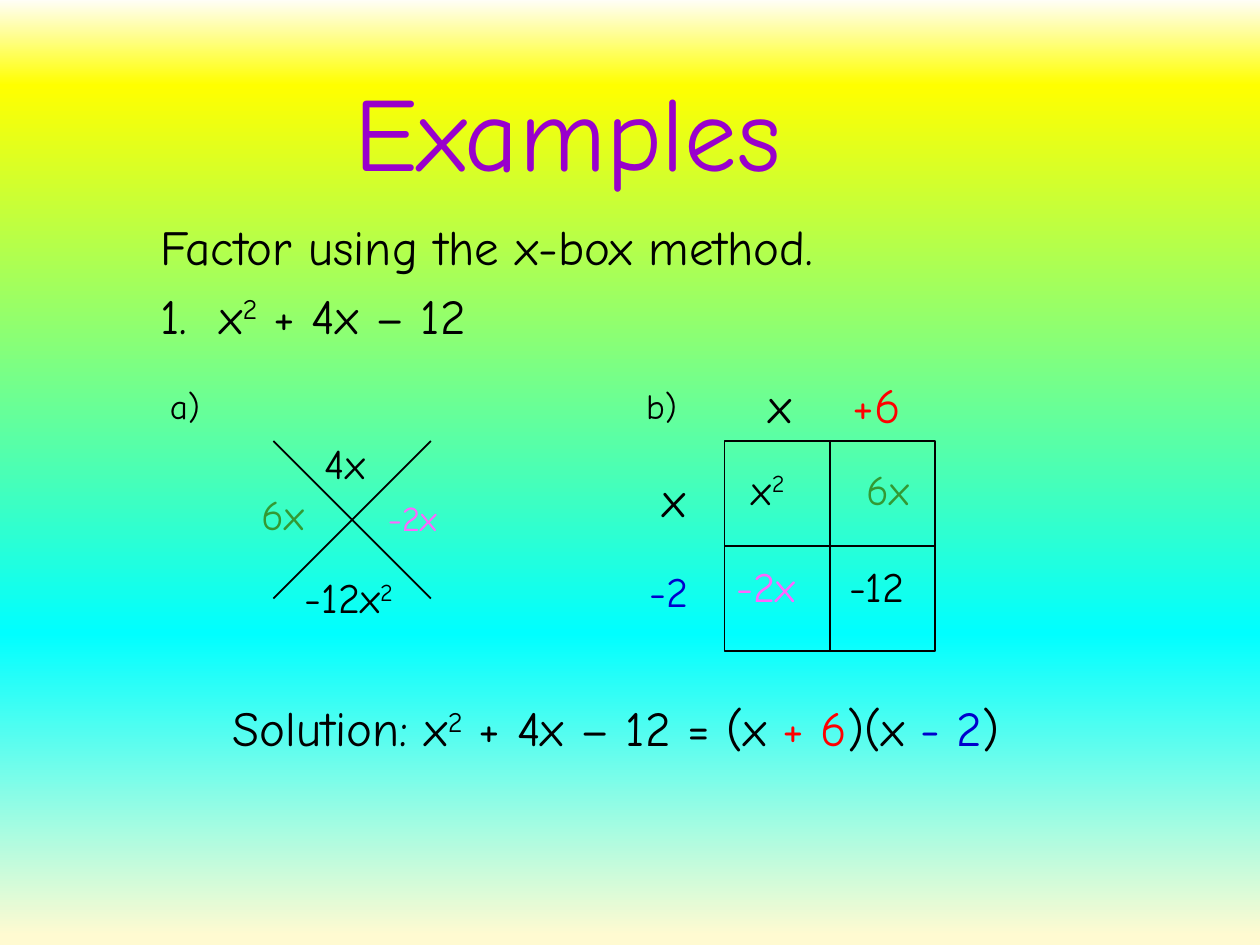
from dataclasses import dataclass

from lxml import etree
from pptx import Presentation
from pptx.dml.color import RGBColor
from pptx.enum.shapes import MSO_CONNECTOR, MSO_SHAPE
from pptx.enum.text import MSO_ANCHOR, MSO_AUTO_SIZE, PP_ALIGN
from pptx.oxml.ns import qn
from pptx.util import Inches, Pt

STRAIGHT = MSO_CONNECTOR.STRAIGHT
RECTANGLE = MSO_SHAPE.RECTANGLE
BOTTOM, TOP = MSO_ANCHOR.BOTTOM, MSO_ANCHOR.TOP
CENTER, LEFT = PP_ALIGN.CENTER, PP_ALIGN.LEFT
NO_AUTOFIT = MSO_AUTO_SIZE.NONE

FONT = "Comic Neue"
COLORS = {
    "black": "000000", "purple": "9900CC", "green": "339933",
    "pink": "FF66FF", "red": "FF0000", "blue": "0000CC",
}
BACKGROUND_STOPS = [(0, "FFFEF7"), (9, "FFFF00"), (67, "00FFFF"), (99, "FFFAD1")]


@dataclass
class Span:
    text: str
    color: str = "black"
    raised: bool = False


@dataclass
class Label:
    left: float
    top: float
    spans: list[Span]
    size: int = 24
    width: float = 1.1
    height: float = 0.5


SQUARED = Span("2", raised=True)
BODY_LINES = [
    [Span("Factor using the x-box method.")],
    [Span("1.  x"), SQUARED, Span(" + 4x – 12")],
]
PART_LABELS = [
    Label(1.25, 3.0, [Span("a)")], 20),
    Label(5.03, 3.0, [Span("b)")], 20),
]
CROSS_LABELS = [
    Label(2.48, 3.42, [Span("4x")]),
    Label(2.32, 4.49, [Span("-12x"), SQUARED]),
    Label(1.98, 3.83, [Span("6x", "green")]),
    Label(2.98, 3.89, [Span("-2x", "pink")], 20),
]
BOX_LABELS = [
    Label(6.0, 2.92, [Span("x")], 28),
    Label(6.67, 2.92, [Span("+6", "red")], 28),
    Label(5.16, 3.67, [Span("x")], 28),
    Label(5.06, 4.44, [Span("-2", "blue")]),
    Label(5.87, 3.63, [Span("x"), SQUARED]),
    Label(6.78, 3.63, [Span("6x", "green")]),
    Label(5.75, 4.4, [Span("-2x", "pink")]),
    Label(6.64, 4.4, [Span("-12")]),
]
SOLUTION = Label(1.75, 5.58, [
    Span("Solution: x"), SQUARED, Span(" + 4x – 12 = (x "), Span("+ 6", "red"),
    Span(")(x "), Span("- 2", "blue"), Span(")"),
], 28, 6.76, 0.87)


def color_of(name: str) -> RGBColor:
    return RGBColor.from_string(COLORS[name])


def set_format(target, **values) -> None:
    for name, value in values.items():
        setattr(target, name, value)


def place(shape, left: float, top: float, width: float, height: float) -> None:
    set_format(shape, left=Inches(left), top=Inches(top),
               width=Inches(width), height=Inches(height))


def write_spans(para, spans: list[Span], size: int) -> None:
    for span in spans:
        run = para.add_run()
        run.text = span.text
        set_format(run.font, name=FONT, size=Pt(size), bold=False)
        run.font.color.rgb = color_of(span.color)
        if span.raised:
            run.font._element.set("baseline", "30000")


def paint_background(slide) -> None:
    fill = slide.background.fill
    fill.gradient()
    fill.gradient_angle = 270
    stop_list = slide._element.find(".//" + qn("a:gsLst"))
    for stop in list(stop_list):
        stop_list.remove(stop)
    for percent, color in BACKGROUND_STOPS:
        stop = etree.SubElement(stop_list, qn("a:gs"), pos=str(percent * 1000))
        etree.SubElement(stop, qn("a:srgbClr"), val=color)


def add_text_shadow(run) -> None:
    properties = run.font._element
    effects = etree.Element(qn("a:effectLst"))
    shadow = etree.SubElement(effects, qn("a:outerShdw"), dist="35921",
                              dir="2700000", algn="ctr", rotWithShape="0")
    etree.SubElement(shadow, qn("a:srgbClr"), val=COLORS["black"])
    properties.find(qn("a:solidFill")).addnext(effects)


def fill_title(title) -> None:
    place(title, 0.75, 0.33, 7.51, 1.25)
    frame = title.text_frame
    set_format(frame, vertical_anchor=BOTTOM, auto_size=NO_AUTOFIT)
    para = frame.paragraphs[0]
    para.alignment = CENTER
    write_spans(para, [Span("Examples", "purple")], 60)
    add_text_shadow(para.runs[0])


def fill_body(body) -> None:
    place(body, 1.17, 1.67, 8.42, 1.3)
    frame = body.text_frame
    set_format(frame, vertical_anchor=TOP, auto_size=NO_AUTOFIT)
    for index, spans in enumerate(BODY_LINES):
        para = frame.add_paragraph() if index else frame.paragraphs[0]
        set_format(para, alignment=LEFT, space_before=Pt(5.6))
        properties = para._p.get_or_add_pPr()
        properties.set("marL", str(Inches(0.67)))
        properties.set("indent", str(-Inches(0.67)))
        etree.SubElement(properties, qn("a:buNone"))
        write_spans(para, spans, 28)


def add_label(slide, label: Label):
    box = slide.shapes.add_textbox(Inches(label.left), Inches(label.top),
                                   Inches(label.width), Inches(label.height))
    box.text_frame.word_wrap = True
    para = box.text_frame.paragraphs[0]
    write_spans(para, label.spans, label.size)
    return para


def add_line(slide, x1: float, y1: float, x2: float, y2: float) -> None:
    line = slide.shapes.add_connector(STRAIGHT, *map(Inches, (x1, y1, x2, y2)))
    line.line.color.rgb = color_of("black")
    line.line.width = Pt(1)
    etree.SubElement(line._element.spPr, qn("a:effectLst"))


def draw_cross(slide, left: float, top: float, side: float) -> None:
    right, bottom = left + side, top + side
    add_line(slide, left, top, right, bottom)
    add_line(slide, left, bottom, right, top)


def draw_box(slide, left: float, top: float, side: float) -> None:
    """Draw a square split into two rows and two columns."""
    square = slide.shapes.add_shape(RECTANGLE, *map(Inches, (left, top, side, side)))
    square.shadow.inherit = False
    square.fill.background()
    square.line.color.rgb = color_of("black")
    square.line.width = Pt(1)
    half = side / 2
    add_line(slide, left + half, top, left + half, top + side)
    add_line(slide, left, top + half, left + side, top + half)


def main() -> None:
    deck = Presentation()
    set_format(deck, slide_width=Inches(10), slide_height=Inches(7.5))
    slide = deck.slides.add_slide(deck.slide_layouts[1])
    paint_background(slide)
    fill_title(slide.shapes.title)
    fill_body(slide.placeholders[1])
    draw_cross(slide, 2.17, 3.5, 1.25)
    draw_box(slide, 5.75, 3.5, 1.67)
    for label in PART_LABELS + CROSS_LABELS + BOX_LABELS:
        add_label(slide, label)
    add_label(slide, SOLUTION).line_spacing = 0.8
    deck.save("out.pptx")


if __name__ == "__main__":
    main()
